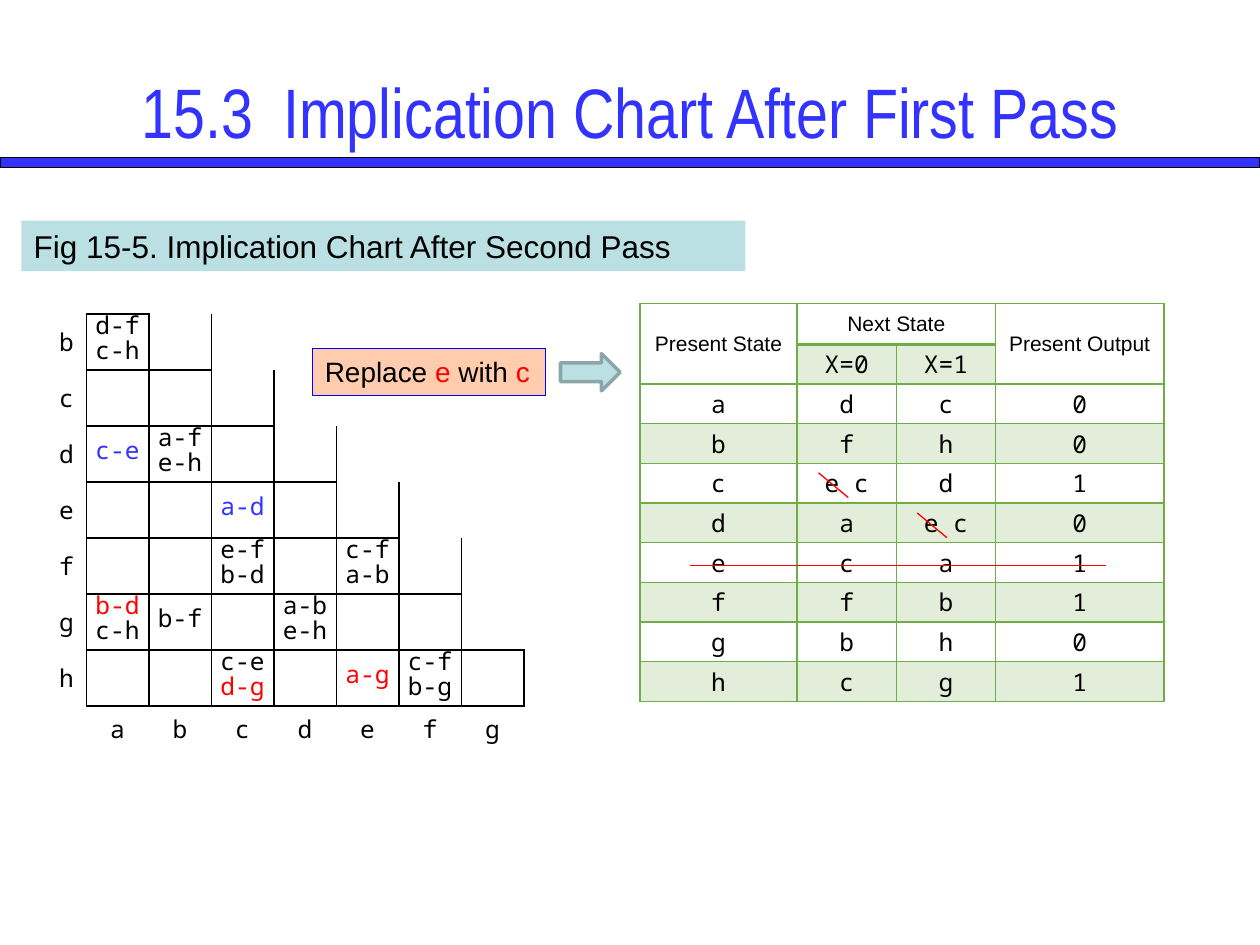
"""Build the slide showing an implication chart beside its reduced state table."""
import pptx
import pptx.util
from pptx.dml.color import RGBColor
from pptx.enum.shapes import MSO_CONNECTOR, MSO_SHAPE
from pptx.enum.text import MSO_ANCHOR, MSO_AUTO_SIZE, PP_ALIGN
from pptx.oxml.ns import qn
from lxml import etree

Cm, Pt = pptx.util.Cm, pptx.util.Pt

BLACK = RGBColor(0x00, 0x00, 0x00)
BLUE = RGBColor(0x33, 0x33, 0xFF)
PURE_BLUE = RGBColor(0x00, 0x00, 0xFF)
RED = RGBColor(0xFF, 0x00, 0x00)
ORANGE = RGBColor(0xFF, 0x66, 0x00)
GREEN = RGBColor(0x70, 0xAD, 0x47)
TEAL = RGBColor(0xBB, 0xE0, 0xE3)
DARK_TEAL = RGBColor(0x8A, 0xA6, 0xA8)

PLAIN_TABLE = "{2D5ABB26-0587-4C30-8999-92F81FD0307C}"
NEIGHBOURS = {"L": (0, -1), "R": (0, 1), "T": (-1, 0), "B": (1, 0)}

CHART_ROWS = "bcdefgh"
CHART_COLUMNS = "abcdefg"
IMPLIED_PAIRS = {
    "ba": "d-f c-h", "da": "c-e", "db": "a-f e-h", "ec": "a-d",
    "fc": "e-f b-d", "fe": "c-f a-b", "ga": "b-d c-h", "gb": "b-f",
    "gd": "a-b e-h", "hc": "c-e d-g", "he": "a-g", "hf": "c-f b-g",
}
HIGHLIGHTS = {
    ("da", "c-e"): BLUE, ("ec", "a-d"): BLUE, ("ga", "b-d"): RED,
    ("hc", "d-g"): RED, ("he", "a-g"): RED,
}

STATE_ROWS = [
    ("Present State", "Next State", "", "Present Output"),
    ("", "X=0", "X=1", ""),
    ("a", "d", "c", "0"),
    ("b", "f", "h", "0"),
    ("c", "e c", "d", "1"),
    ("d", "a", "e c", "0"),
    ("e", "c", "a", "1"),
    ("f", "f", "b", "1"),
    ("g", "b", "h", "0"),
    ("h", "c", "g", "1"),
]


def in_staircase(row, column):
    return 0 <= row < len(CHART_ROWS) and 1 <= column <= row + 1


class SlideBuilder:
    sans = "Arial"
    narrow = "Arial Narrow"
    mono = "Noto Sans Mono"

    def __init__(self, presentation):
        self.slide = presentation.slides.add_slide(presentation.slide_layouts[5])

    def add_text(self, frame, lines, font, size, align=PP_ALIGN.LEFT, spacing=None):
        for index, line in enumerate(lines):
            paragraph = frame.add_paragraph() if index else frame.paragraphs[0]
            paragraph.alignment = align
            paragraph.line_spacing = spacing
            for text, color in line:
                run = paragraph.add_run()
                run.text = text
                run.font.name = font
                run.font.size = Pt(size)
                run.font.color.rgb = color

    def fade(self, properties, percent):
        color = properties.find(qn("a:solidFill") + "/" + qn("a:srgbClr"))
        etree.SubElement(color, qn("a:alpha")).set("val", str(percent * 1000))

    def title(self, text, left, top, width, height):
        heading = self.slide.shapes.title
        heading.left, heading.top = Cm(left), Cm(top)
        heading.width, heading.height = Cm(width), Cm(height)
        heading.text_frame.auto_size = MSO_AUTO_SIZE.NONE
        heading.text_frame.vertical_anchor = MSO_ANCHOR.MIDDLE
        self.add_text(heading.text_frame, [[(text, BLUE)]], self.narrow, 40, PP_ALIGN.CENTER)

    def box(self, kind, left, top, width, height, fill, line=None, weight=0.75, opacity=None):
        shape = self.slide.shapes.add_shape(kind, Cm(left), Cm(top), Cm(width), Cm(height))
        shape.shadow.inherit = False
        shape.fill.solid()
        shape.fill.fore_color.rgb = fill
        if opacity:
            self.fade(shape._element.spPr, opacity)
        if line is None:
            shape.line.fill.background()
        else:
            shape.line.color.rgb = line
            shape.line.width = Pt(weight)
        return shape

    def label(self, shape, runs, size, wrap=True):
        frame = shape.text_frame
        frame.word_wrap = wrap
        frame.auto_size = MSO_AUTO_SIZE.SHAPE_TO_FIT_TEXT
        frame.vertical_anchor = MSO_ANCHOR.TOP
        self.add_text(frame, [runs], self.sans, size)

    def strike(self, left, top, right, bottom):
        stroke = self.slide.shapes.add_connector(
            MSO_CONNECTOR.STRAIGHT, Cm(left), Cm(top), Cm(right), Cm(bottom))
        stroke.line.color.rgb = RED
        stroke.line.width = Pt(0.75)
        etree.SubElement(stroke._element.spPr, qn("a:effectLst"))

    def table(self, left, top, widths, heights):
        grid = self.slide.shapes.add_table(
            len(heights), len(widths), Cm(left), Cm(top),
            Cm(sum(widths)), Cm(sum(heights))).table
        grid.first_row = grid.horz_banding = False
        grid._tbl.tblPr.find(qn("a:tableStyleId")).text = PLAIN_TABLE
        for column, width in zip(grid.columns, widths):
            column.width = Cm(width)
        for row, height in zip(grid.rows, heights):
            row.height = Cm(height)
        return grid

    def borders(self, cell, color, weights):
        properties = cell._tc.get_or_add_tcPr()
        for side, weight in weights.items():
            edge = etree.SubElement(properties, qn("a:ln" + side), w=str(Pt(weight)))
            paint = etree.SubElement(edge, qn("a:solidFill"))
            etree.SubElement(paint, qn("a:srgbClr"), val=str(color))

    def implication_chart(self, left, top):
        count = len(CHART_ROWS) + 1
        chart = self.table(left, top, [1.26] * count, [1.13] * count)
        for row in range(count):
            for column in range(count):
                cell = chart.cell(row, column)
                self.borders(cell, BLACK, {
                    side: 1 for side, (down, across) in NEIGHBOURS.items()
                    if in_staircase(row, column) or in_staircase(row + down, column + across)})
                cell.fill.background()
                if in_staircase(row, column):
                    self.pairs(cell, CHART_ROWS[row] + CHART_COLUMNS[column - 1])
        for index, (row_state, column_state) in enumerate(zip(CHART_ROWS, CHART_COLUMNS)):
            side_cell = chart.cell(index, 0)
            side_cell.vertical_anchor = MSO_ANCHOR.MIDDLE
            self.add_text(side_cell.text_frame, [[(row_state, BLACK)]],
                          self.mono, 14, PP_ALIGN.RIGHT)
            self.add_text(chart.cell(count - 1, index + 1).text_frame,
                          [[(column_state, BLACK)]], self.mono, 14, PP_ALIGN.CENTER)

    def pairs(self, cell, states):
        cell.vertical_anchor = MSO_ANCHOR.MIDDLE
        cell.margin_left = cell.margin_right = cell.margin_top = cell.margin_bottom = 0
        lines = [[(pair, HIGHLIGHTS.get((states, pair), BLACK))]
                 for pair in IMPLIED_PAIRS.get(states, "").split()]
        self.add_text(cell.text_frame, lines, self.mono, 14, PP_ALIGN.CENTER, Pt(14))

    def state_table(self, left, top):
        states = self.table(left, top, [3.17, 2, 2, 3.39], [0.82] + [0.8] * 9)
        for row, values in enumerate(STATE_ROWS):
            for column, value in enumerate(values):
                cell = states.cell(row, column)
                weights = dict.fromkeys(NEIGHBOURS, 1)
                if column in (1, 2) and row < 2:
                    weights["T" if row else "B"] = 2
                self.borders(cell, GREEN, weights)
                if row % 2 and value:
                    cell.fill.solid()
                    cell.fill.fore_color.rgb = GREEN
                    self.fade(cell._tc.tcPr, 20)
                else:
                    cell.fill.background()
                cell.vertical_anchor = MSO_ANCHOR.MIDDLE
                cell.margin_top = cell.margin_bottom = 0
                font, size = (self.mono, 14) if row else (self.sans, 12)
                if value:
                    self.add_text(cell.text_frame, [[(value, BLACK)]], font, size, PP_ALIGN.CENTER)
        states.cell(0, 0).merge(states.cell(1, 0))
        states.cell(0, 1).merge(states.cell(0, 2))
        states.cell(0, 3).merge(states.cell(1, 3))


def main():
    presentation = pptx.Presentation()
    presentation.slide_width, presentation.slide_height = Cm(25.4), Cm(19.05)
    builder = SlideBuilder(presentation)
    builder.box(MSO_SHAPE.RECTANGLE, 0, 3.17, 25.4, 0.21, BLUE, BLACK)
    builder.title("15.3\t Implication Chart After First Pass", 0.5, 0.64, 24.4, 3.17)
    caption = builder.box(MSO_SHAPE.RECTANGLE, 0.43, 4.45, 14.6, 1.02, TEAL)
    builder.label(caption, [("Fig 15-5. Implication Chart After Second Pass", BLACK)], 18)
    builder.implication_chart(0.48, 6.33)
    builder.state_table(12.9, 6.12)
    builder.strike(13.9, 11.4, 22.3, 11.4)
    for left, top in [(16.5, 9.53), (18.49, 10.34)]:
        builder.strike(left, top, left + 0.6, top + 0.5)
    replacement = builder.box(MSO_SHAPE.RECTANGLE, 6.3, 7.03, 4.7, 0.94,
                              ORANGE, PURE_BLUE, opacity=32)
    builder.label(replacement, [("Replace ", BLACK), ("e", RED), (" with ", BLACK), ("c", RED)],
                  16, wrap=False)
    builder.box(MSO_SHAPE.RIGHT_ARROW, 11.3, 7.13, 1.2, 0.75, TEAL, DARK_TEAL, 2)
    presentation.save("out.pptx")


if __name__ == "__main__":
    main()
